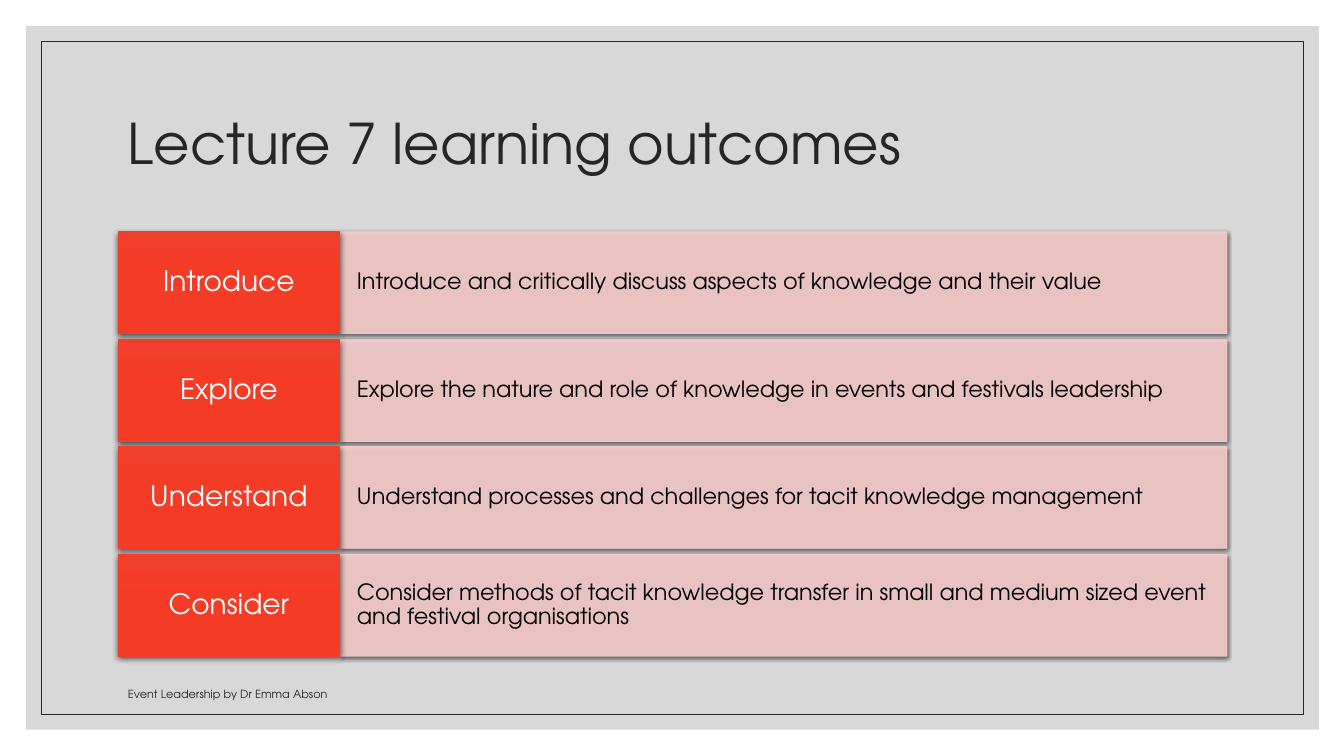
from copy import deepcopy

from lxml import etree
from pptx import Presentation
from pptx.dml.color import RGBColor
from pptx.enum.shapes import MSO_SHAPE
from pptx.enum.text import MSO_ANCHOR, PP_ALIGN
from pptx.oxml.ns import qn
from pptx.util import Emu, Pt

RECTANGLE = MSO_SHAPE.RECTANGLE
LEFT, CENTER = PP_ALIGN.LEFT, PP_ALIGN.CENTER
MIDDLE, BOTTOM = MSO_ANCHOR.MIDDLE, MSO_ANCHOR.BOTTOM
PX = 9144
FONT = "TeX Gyre Adventor"
INK = "262626"
RED_STOPS = ((0, "F03F2B"), (0.5, "F43B26"), (1, "F33B26"))
PINK = "F9CFCD"
OUTCOMES = (
    ("Introduce", "Introduce and critically discuss aspects of knowledge and their value"),
    ("Explore", "Explore the nature and role of knowledge in events and festivals leadership"),
    ("Understand", "Understand processes and challenges for tacit knowledge management"),
    ("Consider", "Consider methods of tacit knowledge transfer in small and medium sized "
                 "event and festival organisations"),
)


def px(length):
    """Turn a length in px into EMU."""
    return Emu(length * PX)


def color(hex_code):
    """Turn a hex string into a colour."""
    return RGBColor.from_string(hex_code)


def write(shape, text, size=16, ink=INK, align=LEFT, anchor=MIDDLE, inset=(10, 5), spacing=None):
    """Fill a shape's text frame with one formatted paragraph."""
    frame = shape.text_frame
    frame.word_wrap = True
    frame.vertical_anchor = anchor
    frame.margin_left = frame.margin_right = px(inset[0])
    frame.margin_top = frame.margin_bottom = px(inset[1])
    paragraph = frame.paragraphs[0]
    paragraph.text = text
    paragraph.alignment = align
    paragraph.line_spacing = spacing
    font = paragraph.font
    font.name = FONT
    font.size = Pt(size)
    font.color.rgb = color(ink)


def add_text(slide, box, text, **text_format):
    """Add a text box holding formatted text."""
    write(slide.shapes.add_textbox(*map(px, box)), text, **text_format)


def add_panel(slide, box, fill=None, line=None):
    """Add a flat rectangle with optional fill and thin outline."""
    panel = slide.shapes.add_shape(RECTANGLE, *map(px, box))
    panel.shadow.inherit = False
    if fill:
        panel.fill.solid()
        panel.fill.fore_color.rgb = color(fill)
    else:
        panel.fill.background()
    if line:
        panel.line.color.rgb = color(line)
        panel.line.width = Pt(0.5)
    else:
        panel.line.fill.background()
    return panel


def set_alpha(parent, percent):
    """Set the opacity of every colour below an element."""
    for tint in parent.iter(qn("a:srgbClr")):
        etree.SubElement(tint, qn("a:alpha"), val=str(percent * 1000))


def add_shadow(shape, blur, distance):
    """Give a shape a soft black shadow that falls downwards."""
    effects = shape._element.spPr.find(qn("a:effectLst"))
    shadow = etree.SubElement(
        effects, qn("a:outerShdw"), blurRad=str(Pt(blur)), dist=str(Pt(distance)),
        dir="5400000", algn="ctr", rotWithShape="0")
    etree.SubElement(shadow, qn("a:srgbClr"), val="000000")
    set_alpha(shadow, 63)


def fill_gradient(shape, stops):
    """Fill a shape with a gradient running from top to bottom."""
    shape.fill.gradient()
    shape.fill.gradient_angle = 270
    stop_list = shape._element.spPr.find(".//" + qn("a:gsLst"))
    stop_list.append(deepcopy(stop_list[0]))
    for stop, (position, tint) in zip(shape.fill.gradient_stops, stops):
        stop.position = position
        stop.color.rgb = color(tint)


def add_backdrop(slide, box):
    """Add the grey page panel and the thin frame inside it."""
    left, top, width, height = box
    page = add_panel(slide, box, fill="BFBFBF")
    set_alpha(page._element.spPr, 60)
    add_panel(slide, (left + 15, top + 15, width - 30, height - 30), line=INK)


def add_outcome(slide, box, verb, outcome):
    """Add one row: a red verb tile beside a pink description."""
    left, top, width, height = box
    verb_width = width // 5
    description = add_panel(
        slide, (left + verb_width, top, width - verb_width, height), fill=PINK, line=PINK)
    set_alpha(description._element.spPr, 90)
    add_shadow(description, 3, 1)
    write(description, outcome, ink="000000", inset=(17, 26), spacing=0.9)

    tile = add_panel(slide, (left, top, verb_width, height), line=RED_STOPS[0][1])
    fill_gradient(tile, RED_STOPS)
    add_shadow(tile, 4.5, 1.5)
    write(tile, verb, size=20, ink="FFFFFF", align=CENTER, inset=(12, 10), spacing=0.9)


def add_outcomes(slide, box, row_height=101):
    """Spread the outcome rows evenly over the box."""
    left, top, width, height = box
    pitch = (height - row_height) / (len(OUTCOMES) - 1)
    for index, (verb, outcome) in enumerate(OUTCOMES):
        row = (left, top + round(index * pitch), width, row_height)
        add_outcome(slide, row, verb, outcome)


def main():
    """Build the learning outcomes slide and save it."""
    deck = Presentation()
    deck.slide_width, deck.slide_height = px(1333), px(750)
    slide = deck.slides.add_slide(deck.slide_layouts[6])
    add_backdrop(slide, (26, 26, 1282, 698))
    add_text(slide, (117, 70, 1100, 150), "Lecture 7 learning outcomes", size=40, spacing=0.9)
    add_text(slide, (117, 660, 636, 40), "Event Leadership by Dr Emma Abson", size=8, anchor=BOTTOM)
    add_outcomes(slide, (117, 230, 1100, 421))
    deck.save("out.pptx")


if __name__ == "__main__":
    main()
